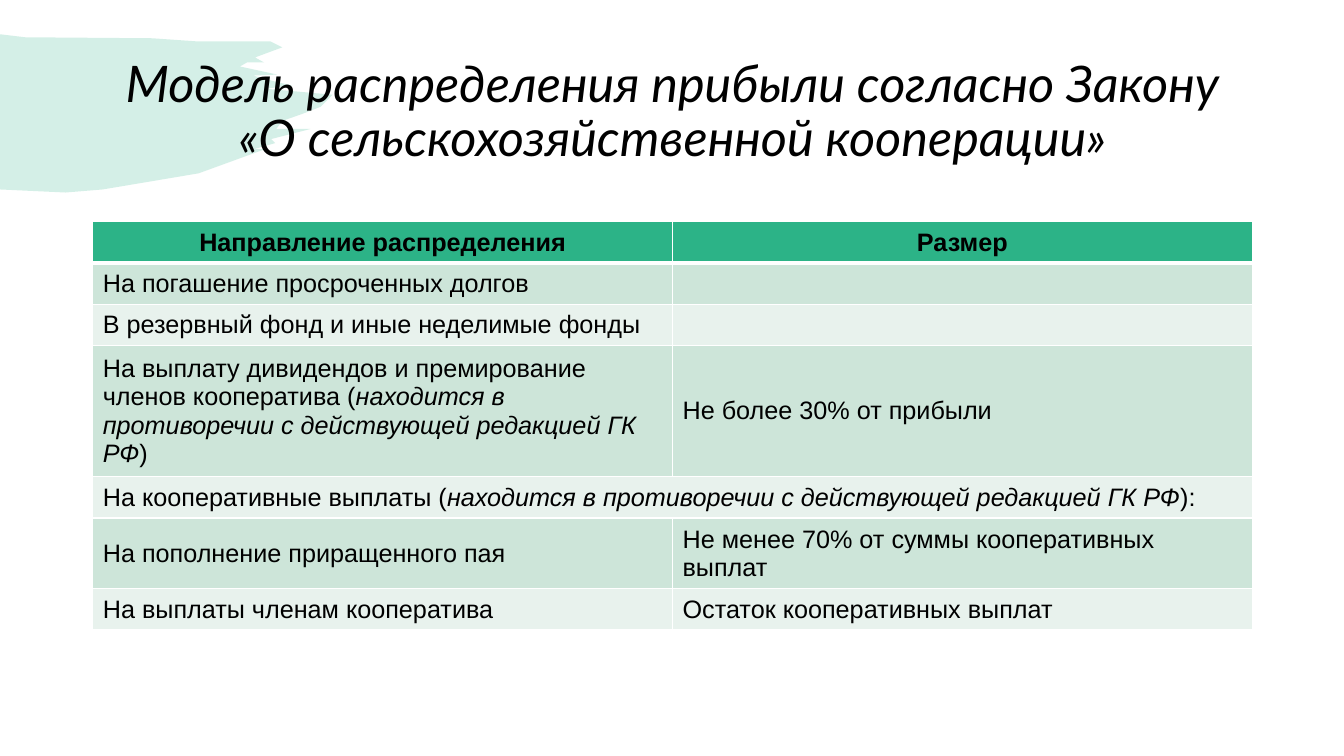
from dataclasses import dataclass

from lxml.etree import SubElement
from pptx import Presentation
from pptx.dml.color import RGBColor as Color
from pptx.enum.text import MSO_ANCHOR as Anchor, PP_ALIGN as Align
from pptx.oxml.ns import qn
from pptx.util import Inches, Pt


@dataclass(frozen=True)
class Theme:
    accent: str = "2CB387"
    band_dark: str = "CDE5D9"
    band_light: str = "E8F2ED"
    border: str = "FFFFFF"
    text: str = "000000"
    title_font: str = "Lato"
    table_font: str = "Arial"
    title_size: int = 36
    table_size: int = 18
    brush_opacity: int = 20


@dataclass(frozen=True)
class Row:
    """One table row; note is the italic phrase between left and tail."""
    left: str
    right: str = ""
    note: str = ""
    tail: str = ""
    merged: bool = False


THEME = Theme()
LEFT, WIDTH = 0.92, 11.5
ROW_HEIGHT = 0.41
TITLE = "Модель распределения прибыли согласно Закону «О сельскохозяйственной кооперации»"
NOTE = "находится в противоречии с действующей редакцией ГК РФ"
ROWS = [
    Row("Направление распределения", "Размер"),
    Row("На погашение просроченных долгов"),
    Row("В резервный фонд и иные неделимые фонды"),
    Row("На выплату дивидендов и премирование членов кооператива (",
        "Не более 30% от прибыли", NOTE, ")"),
    Row("На кооперативные выплаты (", note=NOTE, tail="):", merged=True),
    Row("На пополнение приращенного пая", "Не менее 70% от суммы кооперативных выплат"),
    Row("На выплаты членам кооператива", "Остаток кооперативных выплат"),
]

# Brush stroke outline, clockwise from the top left
BRUSH_OUTLINE = [
    (0, 0.34), (0.25, 0.37), (1.51, 0.38), (1.94, 0.41), (2.48, 0.41), (2.68, 0.41),
    (2.8, 0.47), (2.53, 0.57), (2.62, 0.62), (2.45, 0.62), (2.38, 0.66), (2.75, 0.74),
    (2.51, 0.75), (2.73, 0.81), (2.9, 0.85), (2.63, 0.88), (3.3, 0.94), (3.18, 1.06),
    (3, 1.13), (2.8, 1.2), (2.74, 1.28), (3.08, 1.28), (2.69, 1.38), (2.73, 1.42),
    (2.52, 1.48), (2.63, 1.48), (1.97, 1.72), (1.02, 1.88), (0.65, 1.91), (0, 1.88),
]


def draw_brush(slide) -> None:
    start, *others = [(Inches(x), Inches(y)) for x, y in BRUSH_OUTLINE]
    builder = slide.shapes.build_freeform(*start)
    builder.add_line_segments(others)
    brush = builder.convert_to_shape()
    brush.shadow.inherit = False
    brush.line.fill.background()
    brush.fill.solid()
    brush.fill.fore_color.rgb = Color.from_string(THEME.accent)
    color = brush.element.spPr.find(qn("a:solidFill"))[0]
    SubElement(color, qn("a:alpha"), val=str(THEME.brush_opacity * 1000))


def style_font(font, name: str, size: int) -> None:
    font.name, font.size = name, Pt(size)
    font.color.rgb = Color.from_string(THEME.text)


def draw_title(slide) -> None:
    box = slide.shapes.add_textbox(Inches(LEFT), Inches(0.4), Inches(WIDTH), Inches(1.45))
    frame = box.text_frame
    frame.word_wrap = True
    frame.vertical_anchor = Anchor.MIDDLE
    paragraph = frame.paragraphs[0]
    paragraph.text = TITLE
    paragraph.alignment = Align.CENTER
    paragraph.line_spacing = 0.9
    style_font(paragraph.font, THEME.title_font, THEME.title_size)
    paragraph.font.italic = True


def set_borders(cell, top: int, bottom: int) -> None:
    properties = cell._tc.get_or_add_tcPr()
    for side, points in (("L", 1), ("R", 1), ("T", top), ("B", bottom)):
        line = SubElement(properties, qn(f"a:ln{side}"), w=str(int(Pt(points))))
        fill = SubElement(line, qn("a:solidFill"))
        SubElement(fill, qn("a:srgbClr"), val=THEME.border)


def fill_cell(cell, parts: list[str], row_index: int) -> None:
    """Style one cell; the second part, if any, is italic."""
    header = row_index == 0
    set_borders(cell, top=3 if row_index == 1 else 1, bottom=3 if header else 1)
    band = THEME.band_dark if row_index % 2 else THEME.band_light
    cell.fill.solid()
    cell.fill.fore_color.rgb = Color.from_string(THEME.accent if header else band)
    cell.vertical_anchor = Anchor.MIDDLE
    paragraph = cell.text_frame.paragraphs[0]
    style_font(paragraph.font, THEME.table_font, THEME.table_size)
    paragraph.font.bold = header
    paragraph.alignment = Align.CENTER if header else Align.LEFT
    for index, text in enumerate(parts):
        if text:
            run = paragraph.add_run()
            run.text = text
            run.font.italic = index == 1


def draw_table(slide) -> None:
    table = slide.shapes.add_table(
        len(ROWS), 2, Inches(LEFT), Inches(2.2),
        Inches(WIDTH), Inches(ROW_HEIGHT * len(ROWS))).table
    table.first_row = table.horz_banding = False
    for index, row in enumerate(ROWS):
        left, right = table.cell(index, 0), table.cell(index, 1)
        fill_cell(left, [row.left, row.note, row.tail], index)
        fill_cell(right, [row.right], index)
        if row.merged:
            left.merge(right)


def main() -> None:
    presentation = Presentation()
    presentation.slide_width, presentation.slide_height = Inches(13.33), Inches(7.5)
    slide = presentation.slides.add_slide(presentation.slide_layouts[6])
    draw_brush(slide)
    draw_title(slide)
    draw_table(slide)
    presentation.save("out.pptx")


if __name__ == "__main__":
    main()
